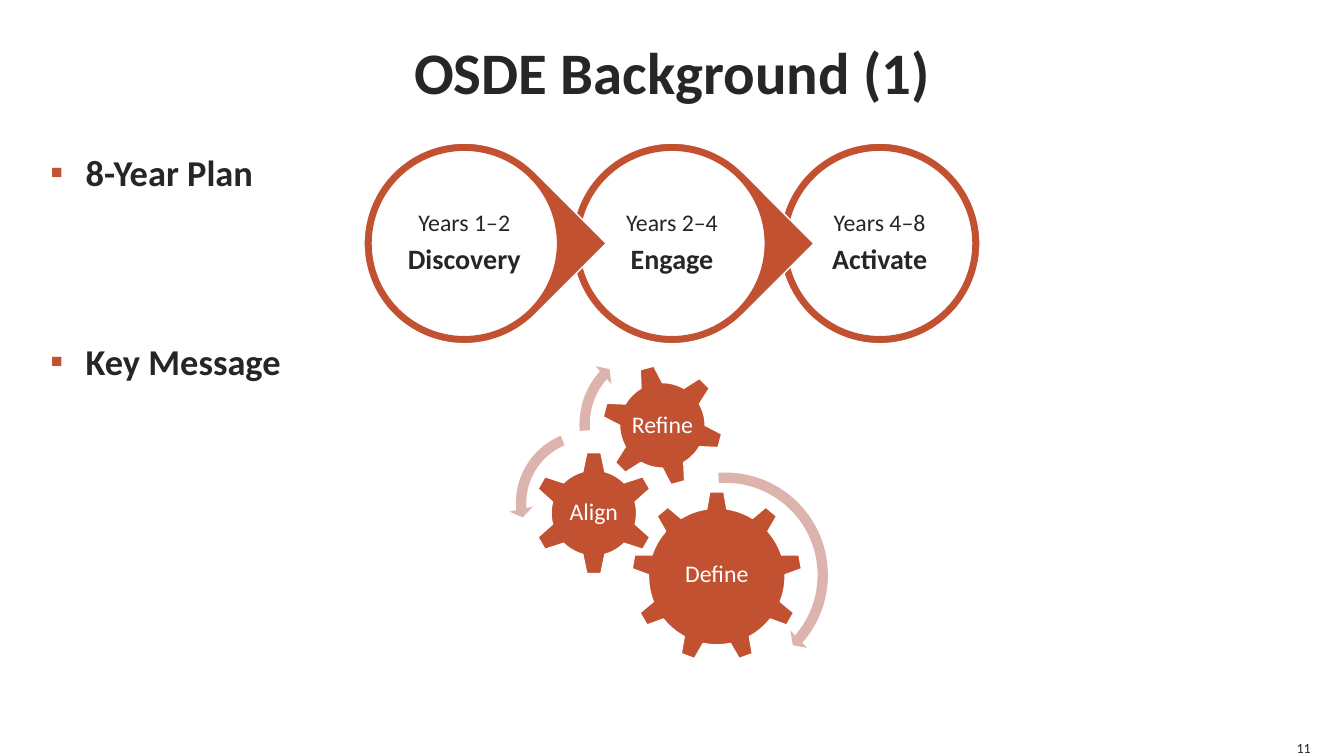
import math
from lxml import etree
from pptx import Presentation
from pptx.dml.color import RGBColor
from pptx.enum.shapes import MSO_SHAPE
from pptx.enum.text import MSO_ANCHOR, PP_ALIGN
from pptx.oxml.ns import qn
from pptx.util import Inches, Pt

ELLIPSE, TEARDROP = MSO_SHAPE.OVAL, MSO_SHAPE.TEAR
ARROW, LEFT_ARROW = MSO_SHAPE.CIRCULAR_ARROW, MSO_SHAPE.LEFT_CIRCULAR_ARROW
CENTER, LEFT, RIGHT = PP_ALIGN.CENTER, PP_ALIGN.LEFT, PP_ALIGN.RIGHT
TOP, MIDDLE, BOTTOM = MSO_ANCHOR.TOP, MSO_ANCHOR.MIDDLE, MSO_ANCHOR.BOTTOM
RUST, PINK, WHITE, INK = "C25131", "DDB3AE", "FFFFFF", "262626"

PHASES = [("Years 1–2", "Discovery"), ("Years 2–4", "Engage"), ("Years 4–8", "Activate")]
# label, centre, teeth, turn in degrees, (distance, half width) of tooth base and tip
GEARS = [
    ("Define", (7.11, 5.72), 9, 0, (0.67, 0.1), (0.84, 0.07)),
    ("Align", (5.89, 5.09), 6, 0, (0.41, 0.11), (0.6, 0.07)),
    ("Refine", (6.57, 4.22), 6, -15, (0.41, 0.11), (0.59, 0.07)),
]
# preset, left, top, size, adjustments
SWEEPS = [
    (ARROW, 6.11, 4.62, 2.17, (0.047, 2.99, 24.71, 159.622, 0.055)),
    (LEFT_ARROW, 5.05, 4.2, 1.58, (0.065, 4.3, 104.891, 148.378, 0.075)),
    (ARROW, 5.68, 3.36, 1.7, (0.06, 3.941, 133.138, 105.082, 0.07)),
]


def color(hex_value):
    return RGBColor.from_string(hex_value)


def paint(shape, fill, line=None, width=1):
    shape.shadow.inherit = False
    shape.fill.solid()
    shape.fill.fore_color.rgb = color(fill)
    if line:
        shape.line.color.rgb = color(line)
        shape.line.width = Pt(width)
    else:
        shape.line.fill.background()


def prepare_frame(shape, anchor, wrap=True):
    frame = shape.text_frame
    settings = {"margin_left": 0, "margin_top": 0, "margin_right": 0, "margin_bottom": 0,
                "vertical_anchor": anchor, "word_wrap": wrap}
    for name, value in settings.items():
        setattr(frame, name, value)
    return frame


def write(paragraph, text, size, ink=INK, bold=False, **layout):
    run = paragraph.add_run()
    run.text = text
    for name, value in {"name": "Calibri", "size": Pt(size), "bold": bold}.items():
        setattr(run.font, name, value)
    run.font.color.rgb = color(ink)
    for name, value in layout.items():
        setattr(paragraph, name, value)


def add_line(slide, box, text, size, anchor, alignment, bold=False, wrap=True):
    shape = slide.shapes.add_textbox(*map(Inches, box))
    frame = prepare_frame(shape, anchor, wrap)
    write(frame.paragraphs[0], text, size, bold=bold, alignment=alignment)


def add_bullet(paragraph):
    properties = paragraph._p.get_or_add_pPr()
    properties.set("marL", str(Inches(0.35)))
    properties.set("indent", str(-Inches(0.35)))
    bullet_color = etree.SubElement(properties, qn("a:buClr"))
    etree.SubElement(bullet_color, qn("a:srgbClr"), val=RUST)
    etree.SubElement(properties, qn("a:buFont"), typeface="Calibri")
    etree.SubElement(properties, qn("a:buChar"), char="▪")


def add_topics(slide, box):
    frame = prepare_frame(slide.shapes.add_textbox(*map(Inches, box)), TOP)
    for index, topic in enumerate(["8-Year Plan", "Key Message"]):
        paragraph = frame.add_paragraph() if index else frame.paragraphs[0]
        add_bullet(paragraph)
        write(paragraph, topic, 26, bold=True, alignment=LEFT, line_spacing=1.25,
              space_before=Pt(96 * index))


def add_phases(slide, left, top, size, pitch):
    inset = 0.07
    # Later phases lie behind the point of the one before
    for index in reversed(range(len(PHASES))):
        x = left + index * pitch
        is_last = index == len(PHASES) - 1
        rim = slide.shapes.add_shape(ELLIPSE if is_last else TEARDROP,
                                     *map(Inches, (x, top, size, size)))
        paint(rim, RUST, WHITE)
        if not is_last:
            rim.adjustments[0] = 1
            rim.rotation = 45
        inner = size - 2 * inset
        disc = slide.shapes.add_shape(ELLIPSE,
                                      *map(Inches, (x + inset, top + inset, inner, inner)))
        paint(disc, WHITE, RUST)
        frame = prepare_frame(disc, MIDDLE)
        years, phase = PHASES[index]
        layout = {"alignment": CENTER, "line_spacing": 0.9, "space_after": Pt(6)}
        write(frame.paragraphs[0], years, 17, **layout)
        write(frame.add_paragraph(), phase, 20, bold=True, **layout)


def gear_outline(center, teeth, turn, base, tip):
    """Points clockwise: each tooth, then the rim up to the next tooth."""
    def point(radius, angle):
        return (Inches(center[0] + radius * math.sin(angle)),
                Inches(center[1] - radius * math.cos(angle)))

    base_radius, tip_radius = math.hypot(*base), math.hypot(*tip)
    base_angle, tip_angle = (math.atan2(half, distance) for distance, half in (base, tip))
    step = 2 * math.pi / teeth
    gap = step - 2 * base_angle
    points = []
    for tooth in range(teeth):
        middle = math.radians(turn) + tooth * step
        points += [point(tip_radius, middle - tip_angle), point(tip_radius, middle + tip_angle)]
        points += [point(base_radius, middle + base_angle + gap * part / 6) for part in range(7)]
    return points


def add_gears(slide):
    for label, *geometry in GEARS:
        points = gear_outline(*geometry)
        builder = slide.shapes.build_freeform(*points[0])
        builder.add_line_segments(points[1:], close=True)
        gear = builder.convert_to_shape()
        paint(gear, RUST, WHITE)
        frame = prepare_frame(gear, MIDDLE)
        write(frame.paragraphs[0], label, 17, WHITE, alignment=CENTER, line_spacing=0.9)
    for preset, left, top, size, adjustments in SWEEPS:
        sweep = slide.shapes.add_shape(preset, *map(Inches, (left, top, size, size)))
        paint(sweep, PINK)
        for index, value in enumerate(adjustments):
            sweep.adjustments[index] = value


def main():
    presentation = Presentation()
    presentation.slide_width = Inches(13.33)
    presentation.slide_height = Inches(7.5)
    slide = presentation.slides.add_slide(presentation.slide_layouts[6])
    # Title and topics
    add_line(slide, (0.5, 0, 12.33, 1.4), "OSDE Background (1)", 42, MIDDLE, CENTER, bold=True)
    add_topics(slide, (0.5, 1.38, 3, 4.75))
    # Diagrams
    add_phases(slide, 3.61, 1.42, 1.99, 2.06)
    add_gears(slide)
    # Slide number
    add_line(slide, (12.83, 7.33, 0.17, 0.17), "11", 10, BOTTOM, RIGHT, wrap=False)
    presentation.save("out.pptx")


if __name__ == "__main__":
    main()
